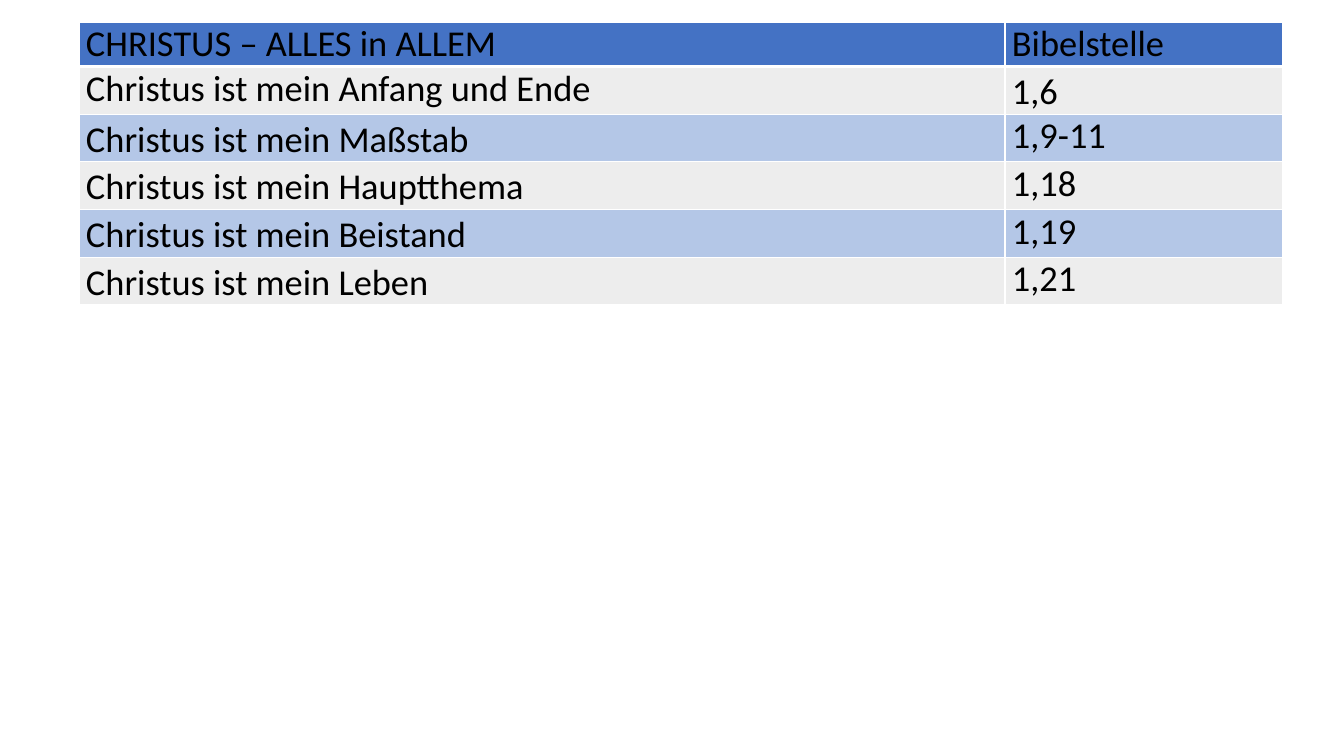
from dataclasses import dataclass

from lxml.etree import SubElement
from pptx import Presentation
from pptx.dml.color import RGBColor
from pptx.oxml.ns import qn
from pptx.table import _Cell
from pptx.util import Emu, Pt

EMU_PER_PX = 914400 / 100.8
COL_WIDTHS = (926, 278)
HEADER_H, ROW_H = 41, 42
HEADER_FILL, BAND_FILLS = "4472C4", ("EDEDED", "B4C7E7")
FONT = {"name": "Calibri", "size": Pt(26)}
LOOSE = 1.07


@dataclass
class Entry:
    text: str
    spacing: float | None = None


ROWS = [
    (Entry("CHRISTUS – ALLES in ALLEM"), Entry("Bibelstelle")),
    (Entry("Christus ist mein Anfang und Ende"), Entry("1,6", LOOSE)),
    (Entry("Christus ist mein Maßstab", LOOSE), Entry("1,9-11")),
    (Entry("Christus ist mein Hauptthema", LOOSE), Entry("1,18")),
    (Entry("Christus ist mein Beistand", LOOSE), Entry("1,19")),
    (Entry("Christus ist mein Leben", LOOSE), Entry("1,21")),
]


def px(n: float) -> Emu:
    return Emu(round(n * EMU_PER_PX))


def rgb(color: str) -> RGBColor:
    return RGBColor.from_string(color)


def add_borders(cell: _Cell, widths: dict[str, int], color: str) -> None:
    # Border lines must come before the fill in the cell properties
    tcPr = cell._tc.get_or_add_tcPr()
    for i, (side, width) in enumerate(widths.items()):
        ln = SubElement(tcPr, qn(f"a:ln{side}"), w=str(Pt(width)))
        fill = SubElement(ln, qn("a:solidFill"))
        SubElement(fill, qn("a:srgbClr"), val=color)
        tcPr.insert(i, ln)


def fill_cell(cell: _Cell, entry: Entry, row: int) -> None:
    margins = {"margin_left": px(7), "margin_right": px(7),
               "margin_top": 0, "margin_bottom": 0}
    for name, value in margins.items():
        setattr(cell, name, value)
    cell.fill.solid()
    cell.fill.fore_color.rgb = rgb(BAND_FILLS[(row - 1) % 2] if row else HEADER_FILL)
    add_borders(cell, {"L": 1, "R": 1, "T": 3 if row == 1 else 1,
                       "B": 1 if row else 3}, "FFFFFF")

    p = cell.text_frame.paragraphs[0]
    p.line_spacing = entry.spacing
    r = p.add_run()
    r.text = entry.text
    for name, value in FONT.items():
        setattr(r.font, name, value)
    r.font.bold = False
    r.font.color.rgb = rgb("000000")


def main() -> None:
    prs = Presentation()
    prs.slide_width, prs.slide_height = px(1344), px(756)
    s = prs.slides.add_slide(prs.slide_layouts[6])

    # Table of statements and Bible passages
    heights = [HEADER_H] + [ROW_H] * (len(ROWS) - 1)
    table = s.shapes.add_table(len(ROWS), len(COL_WIDTHS), px(79), px(22),
                               px(sum(COL_WIDTHS)), px(sum(heights))).table
    for column, width in zip(table.columns, COL_WIDTHS):
        column.width = px(width)
    for i, (entries, height) in enumerate(zip(ROWS, heights)):
        table.rows[i].height = px(height)
        for j, entry in enumerate(entries):
            fill_cell(table.cell(i, j), entry, i)

    prs.save("out.pptx")


if __name__ == "__main__":
    main()
